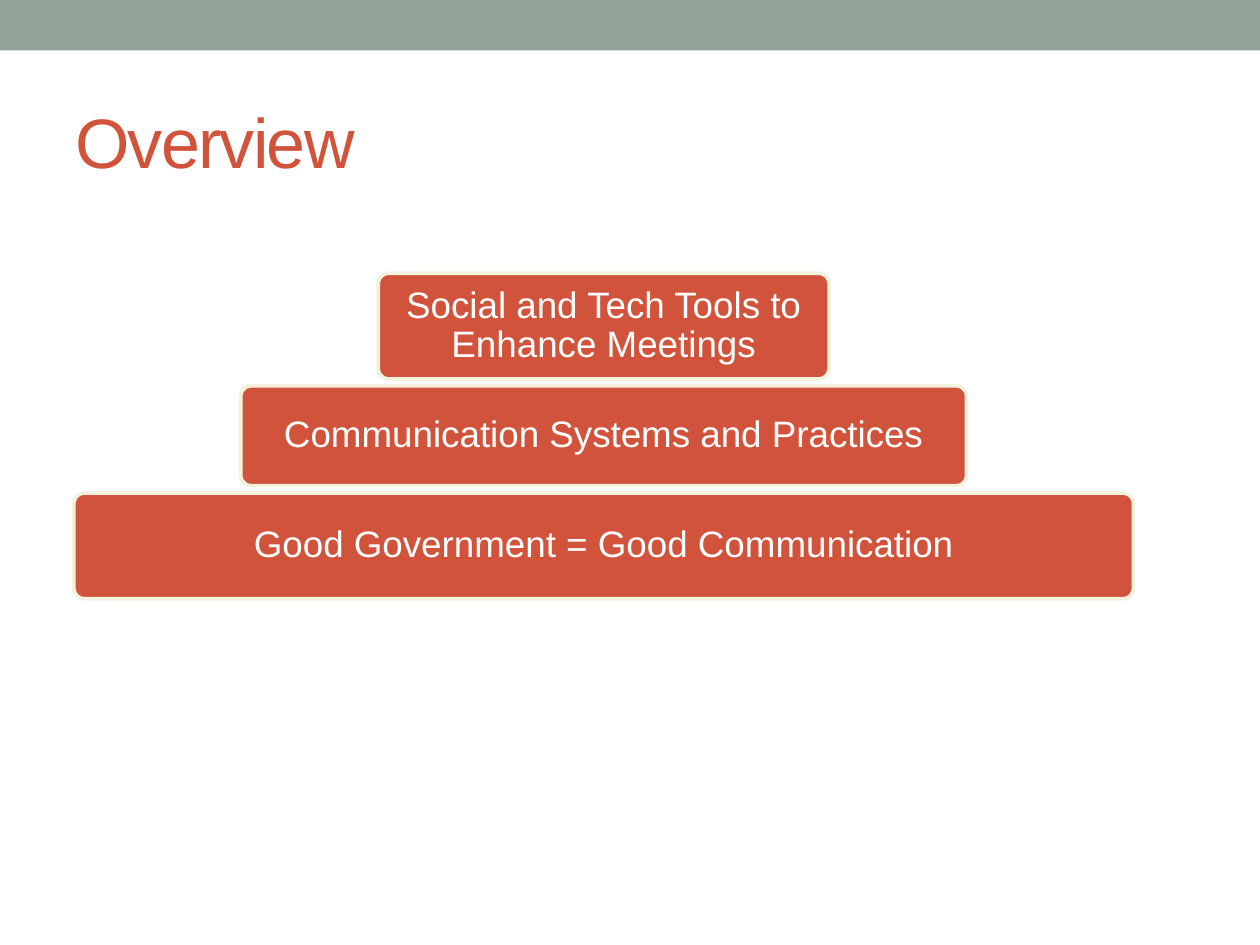
"""Build the Overview slide: a title above a three-step pyramid of bars."""
from dataclasses import dataclass

from pptx import Presentation
from pptx.dml.color import RGBColor
from pptx.enum.shapes import MSO_SHAPE as Preset
from pptx.enum.text import MSO_ANCHOR as Anchor, PP_ALIGN as Align
from pptx.slide import Slide
from pptx.util import Cm, Pt


def color(hex_code):
    return RGBColor.from_string(hex_code)


def write(shape, text, size, font, ink, align=Align.LEFT, line_spacing=1.0,
          tracking=0, inset=0.25):
    frame = shape.text_frame
    frame.word_wrap = True
    frame.vertical_anchor = Anchor.MIDDLE
    frame.margin_left = frame.margin_right = Cm(inset)
    frame.margin_top = frame.margin_bottom = Cm(inset)
    paragraph = frame.paragraphs[0]
    paragraph.alignment = align
    paragraph.line_spacing = line_spacing
    run = paragraph.add_run()
    run.text = text
    run.font.size = Pt(size)
    run.font.name = font
    run.font.color.rgb = color(ink)
    if tracking:
        run.font._element.set("spc", str(round(tracking * 100)))


@dataclass
class SlideBuilder:
    slide: Slide
    font: str = "Arial"
    accent: str = "D2533C"
    band_fill: str = "93A299"
    outline: str = "F3F2DC"
    light: str = "FFFFFF"

    def block(self, preset, left, top, width, height, fill):
        shape = self.slide.shapes.add_shape(
            preset, Cm(left), Cm(top), Cm(width), Cm(height))
        shape.shadow.inherit = False
        shape.fill.solid()
        shape.fill.fore_color.rgb = color(fill)
        shape.line.fill.background()
        return shape

    def band(self, width, height):
        self.block(Preset.RECTANGLE, 0, 0, width, height, self.band_fill)

    def title(self, text, left, top, width, height):
        box = self.slide.shapes.add_textbox(
            Cm(left), Cm(top), Cm(width), Cm(height))
        write(box, text, size=40, font=self.font, ink=self.accent, tracking=-1)

    def step(self, text, center, top, width, height):
        shape = self.block(Preset.ROUNDED_RECTANGLE, center - width / 2, top,
                           width, height, self.accent)
        shape.adjustments[0] = 0.1
        shape.line.color.rgb = color(self.outline)
        shape.line.width = Pt(2.08)
        write(shape, text, size=21, font=self.font, ink=self.light,
              align=Align.CENTER, line_spacing=0.9)


def main():
    presentation = Presentation()
    presentation.slide_width, presentation.slide_height = Cm(25.4), Cm(19.05)
    builder = SlideBuilder(
        presentation.slides.add_slide(presentation.slide_layouts[6]))
    builder.band(25.4, 1.02)
    builder.title("Overview", 1.27, 1.47, 22.86, 2.74)
    steps = [
        ("Social and Tech Tools to Enhance Meetings", 5.51, 9.09, 2.13),
        ("Communication Systems and Practices", 7.78, 14.63, 2.01),
        ("Good Government = Good Communication", 9.94, 21.36, 2.13),
    ]
    for text, top, width, height in steps:
        builder.step(text, 12.17, top, width, height)
    presentation.save("out.pptx")


if __name__ == "__main__":
    main()
